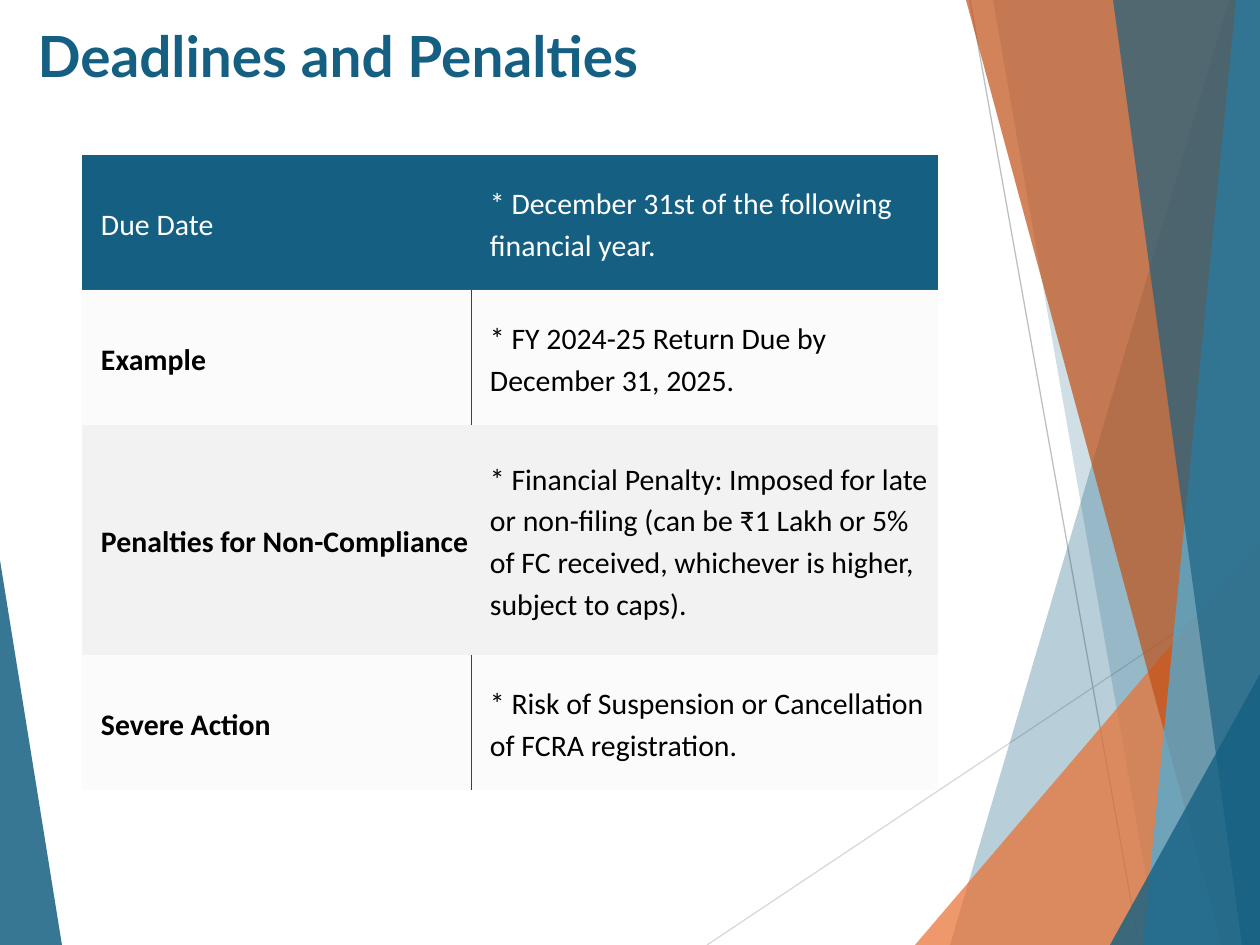
"""Build the Deadlines and Penalties slide with its table and angular side bands."""
import pptx
import pptx.dml.color
import pptx.enum.shapes
import pptx.enum.text
import pptx.oxml
import pptx.oxml.ns
import pptx.util

SCALE = 914400 / 126
WIDTH, HEIGHT = 1260, 945
BLUE, ORANGE, RUST, SKY = "156082", "E97132", "C04F15", "46B1E1"
PALE, DARK = "F2F2F2", "404040"
NO_GRID_STYLE = "{2D5ABB26-0587-4C30-8999-92F81FD0307C}"

TITLE = "Deadlines and Penalties"
ROWS = [
    ("Due Date", "* December 31st of the following financial year."),
    ("Example", "* FY 2024-25 Return Due by December 31, 2025."),
    ("Penalties for Non-Compliance",
     "* Financial Penalty: Imposed for late or non-filing (can be ₹1 Lakh or 5% "
     "of FC received, whichever is higher, subject to caps)."),
    ("Severe Action", "* Risk of Suspension or Cancellation of FCRA registration."),
]
ROW_FILLS = [(BLUE, 100), (PALE, 30), (PALE, 100), (PALE, 30)]
TABLE_LEFT, TABLE_TOP = 82, 155
COLUMN_WIDTHS = [389, 467]
ROW_HEIGHTS = [135, 135, 230, 135]

LEFT_WEDGE = ([(0, 560), (62, HEIGHT), (0, HEIGHT)], BLUE, 85)
THIN_LINES = [((707, HEIGHT), (WIDTH, 576), "D9D9D9"), ((970, 0), (1139, HEIGHT), "BFBFBF")]
BANDS = [(1229, 950, BLUE, 30), (993, 1158, BLUE, 20), (None, 915, ORANGE, 72),
         (966, 1222, RUST, 70), (1236, 1143, SKY, 70), (1113, 1242, BLUE, 65),
         (None, 1110, BLUE, 80)]
CORNER_TOPS = {915: 541, 1110: 674}


def px(value):
    return pptx.util.Emu(round(value * SCALE))


def color(text):
    return pptx.dml.color.RGBColor.from_string(text)


def paint(fill, shade, opacity):
    fill.solid()
    fill.fore_color.rgb = color(shade)
    if opacity < 100:
        node = fill._xPr.find(".//" + pptx.oxml.ns.qn("a:srgbClr"))
        alpha = pptx.oxml.parse_xml(
            f'<a:alpha {pptx.oxml.ns.nsdecls("a")} val="{opacity * 1000}"/>')
        node.append(alpha)


def add_polygon(slide, points, shade, opacity):
    builder = slide.shapes.build_freeform(*points[0], scale=SCALE)
    builder.add_line_segments(points[1:], close=True)
    shape = builder.convert_to_shape()
    shape.shadow.inherit = False
    shape.line.fill.background()
    paint(shape.fill, shade, opacity)


def add_thin_line(slide, start, end, shade):
    line = slide.shapes.add_connector(
        pptx.enum.shapes.MSO_CONNECTOR.STRAIGHT, *map(px, start + end))
    line.line.color.rgb = color(shade)
    line.line.width = pptx.util.Pt(0.75)
    line._element.spPr.append(
        pptx.oxml.parse_xml(f'<a:effectLst {pptx.oxml.ns.nsdecls("a")}/>'))


def add_decoration(slide):
    add_polygon(slide, *LEFT_WEDGE)
    for thin_line in THIN_LINES:
        add_thin_line(slide, *thin_line)
    for top_x, bottom_x, shade, opacity in BANDS:
        if top_x is None:
            points = [(bottom_x, HEIGHT), (WIDTH, CORNER_TOPS[bottom_x]), (WIDTH, HEIGHT)]
        else:
            points = [(top_x, 0), (bottom_x, HEIGHT), (WIDTH, HEIGHT), (WIDTH, 0)]
        add_polygon(slide, points, shade, opacity)


def format_text(paragraph, font_name, size, shade, bold):
    paragraph.alignment = pptx.enum.text.PP_ALIGN.LEFT
    for run in paragraph.runs:
        run.font.name = font_name
        run.font.size = pptx.util.Pt(size)
        run.font.color.rgb = color(shade)
        run.font.bold = bold


def add_title(slide):
    title = slide.shapes.title
    title.left, title.top, title.width, title.height = map(px, (25, 15, 888, 98))
    frame = title.text_frame
    frame.text = TITLE
    frame.word_wrap = True
    frame.auto_size = pptx.enum.text.MSO_AUTO_SIZE.NONE
    frame.vertical_anchor = pptx.enum.text.MSO_ANCHOR.TOP
    format_text(frame.paragraphs[0], "Lato", 32.4, BLUE, True)


def add_border(cell, side):
    border = pptx.oxml.parse_xml(
        f'<a:{side} {pptx.oxml.ns.nsdecls("a")} w="6350"><a:solidFill>'
        f'<a:srgbClr val="{DARK}"/></a:solidFill></a:{side}>')
    cell._tc.get_or_add_tcPr().insert(0, border)


def fill_cell(cell, text, row, column):
    cell.text_frame.text = text
    cell.vertical_anchor = pptx.enum.text.MSO_ANCHOR.MIDDLE
    cell.margin_left, cell.margin_right = px(19), px(1)
    cell.margin_top = cell.margin_bottom = px(15)
    paragraph = cell.text_frame.paragraphs[0]
    paragraph.line_spacing = 1.15
    paragraph.space_after = pptx.util.Pt(8)
    header = row == 0
    format_text(paragraph, "Calibri", 17, "FFFFFF" if header else "000000",
                column == 0 and not header)
    shade, opacity = ROW_FILLS[row]
    paint(cell.fill, shade, opacity)
    if opacity < 100:
        add_border(cell, ("lnR", "lnL")[column])


def add_deadline_table(slide):
    frame = slide.shapes.add_table(
        len(ROWS), len(COLUMN_WIDTHS), px(TABLE_LEFT), px(TABLE_TOP),
        px(sum(COLUMN_WIDTHS)), px(sum(ROW_HEIGHTS)))
    table = frame.table
    table.horz_banding = False
    table._tbl.tblPr.find(pptx.oxml.ns.qn("a:tableStyleId")).text = NO_GRID_STYLE
    for column, width in zip(table.columns, COLUMN_WIDTHS):
        column.width = px(width)
    for row, (height, texts) in enumerate(zip(ROW_HEIGHTS, ROWS)):
        table.rows[row].height = px(height)
        for column, text in enumerate(texts):
            fill_cell(table.cell(row, column), text, row, column)


def main():
    presentation = pptx.Presentation()
    presentation.slide_width, presentation.slide_height = px(WIDTH), px(HEIGHT)
    slide = presentation.slides.add_slide(presentation.slide_layouts[5])
    add_decoration(slide)
    add_title(slide)
    add_deadline_table(slide)
    presentation.save("out.pptx")


if __name__ == "__main__":
    main()
